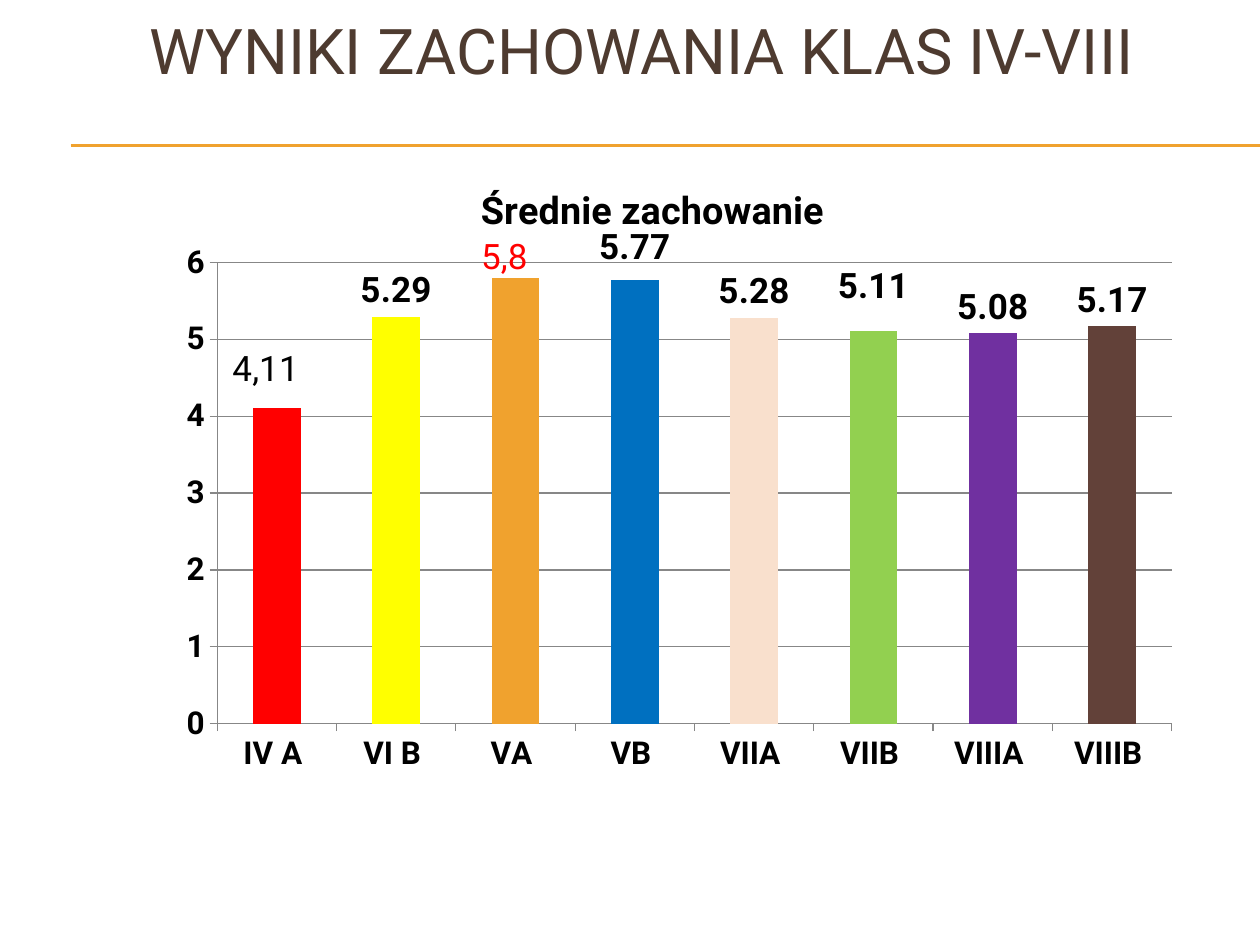
from lxml import etree
from pptx import Presentation
from pptx.chart.data import CategoryChartData
from pptx.dml.color import RGBColor
from pptx.enum.chart import XL_CHART_TYPE, XL_LABEL_POSITION, XL_TICK_MARK
from pptx.enum.shapes import MSO_CONNECTOR
from pptx.enum.text import MSO_ANCHOR, PP_ALIGN
from pptx.oxml import parse_xml
from pptx.oxml.ns import nsdecls, qn
from pptx.util import Pt

COLUMN = XL_CHART_TYPE.COLUMN_CLUSTERED
OUTSIDE_END = XL_LABEL_POSITION.OUTSIDE_END
TICK_OUT = XL_TICK_MARK.OUTSIDE
STRAIGHT = MSO_CONNECTOR.STRAIGHT
MIDDLE = MSO_ANCHOR.MIDDLE
CENTER = PP_ALIGN.CENTER

FONT = "Roboto"
COLORS = {
    "title": "4E3B30",
    "rule": "F0A22E",
    "text": "000000",
    "alert": "FF0000",
    "grid": "878787",
    "series": "F9E0CD",
}
CLASSES = [
    ("IV A ", 4.11, "FF0000"),
    ("VI B ", 5.29, "FFFF00"),
    ("VA ", 5.8, "F0A22E"),
    ("VB ", 5.77, "0070C0"),
    ("VIIA ", 5.28, "F9E0CD"),
    ("VIIB ", 5.11, "92D050"),
    ("VIIIA ", 5.08, "7030A0"),
    ("VIIIB ", 5.17, "624139"),
]
CUSTOM_LABELS = {0: ("4,11", "text"), 2: ("5,8", "alert")}
LABEL_SHIFTS = {0: (-0.01, -0.02), 2: (-0.01, 0.01), 3: (0, -0.01), 5: (0, -0.03)}
NO_LEADER_LINES = (
    f"<c:extLst {nsdecls('c')}>"
    '<c:ext uri="{CE6537A1-D6FC-4f65-9D91-7224C49458BB}" '
    'xmlns:c15="http://schemas.microsoft.com/office/drawing/2012/chart">'
    '<c15:showLeaderLines val="0"/></c:ext></c:extLst>'
)


def style_font(font, size, color, bold=False):
    font.name = FONT
    font.size = Pt(size)
    font.bold = bold
    font.color.rgb = RGBColor.from_string(COLORS[color])


def add_title(slide, text):
    box = slide.shapes.add_textbox(Pt(36), Pt(0), Pt(661.68), Pt(56.16))
    frame = box.text_frame
    frame.word_wrap = True
    frame.vertical_anchor = MIDDLE
    frame.text = text
    paragraph = frame.paragraphs[0]
    paragraph.alignment = CENTER
    style_font(paragraph.runs[0].font, 36, "title")


def add_rule(slide, top):
    rule = slide.shapes.add_connector(STRAIGHT, Pt(40.32), Pt(top), Pt(720), Pt(top))
    rule.line.color.rgb = RGBColor.from_string(COLORS["rule"])
    rule.line.width = Pt(0.75)
    etree.SubElement(rule.element.spPr, qn("a:effectLst"))


def set_layout(parent, position, **settings):
    for old_layout in parent.findall(qn("c:layout")):
        parent.remove(old_layout)
    layout = parse_xml(f"<c:layout {nsdecls('c')}><c:manualLayout/></c:layout>")
    for name, value in settings.items():
        etree.SubElement(layout[0], qn(f"c:{name}")).set("val", str(value))
    parent.insert(position, layout)


def style_line(line):
    line.color.rgb = RGBColor.from_string(COLORS["grid"])
    line.width = Pt(0.75)


def style_axes(chart):
    value_axis = chart.value_axis
    value_axis.minimum_scale = 0
    value_axis.maximum_scale = 6
    value_axis.major_unit = 1
    value_axis.has_major_gridlines = True
    style_line(value_axis.major_gridlines.format.line)
    value_axis.tick_labels.number_format = "#,##0"
    value_axis.tick_labels.number_format_is_linked = False
    for axis in (chart.category_axis, value_axis):
        axis.major_tick_mark = TICK_OUT
        style_line(axis.format.line)
        style_font(axis.tick_labels.font, 18, "text", True)


def hide_leader_lines(chart):
    for labels in chart.element.xpath(".//c:dLbls"):
        for setting in labels.findall(qn("c:showLeaderLines")):
            setting.set("val", "0")
        labels.append(parse_xml(NO_LEADER_LINES))


def style_labels(chart, series):
    labels = series.data_labels
    labels.show_value = True
    labels.position = OUTSIDE_END
    style_font(labels.font, 20, "text", True)
    for index in LABEL_SHIFTS:
        label = series.points[index].data_label
        if index in CUSTOM_LABELS:
            text, color = CUSTOM_LABELS[index]
            label.text_frame.text = text
            style_font(label.text_frame.paragraphs[0].runs[0].font, 20, color)
        else:
            style_font(label.font, 20, "text", True)
        label.position = OUTSIDE_END
    for element, (x, y) in zip(chart.element.xpath(".//c:dLbl"), LABEL_SHIFTS.values()):
        set_layout(element, 1, x=x, y=y)
    hide_leader_lines(chart)


def add_behaviour_chart(slide):
    names, values, fills = zip(*CLASSES)
    data = CategoryChartData()
    data.categories = names
    data.add_series("Series 1", values)
    chart = slide.shapes.add_chart(
        COLUMN, Pt(50.4), Pt(101.52), Pt(630), Pt(354.24), data
    ).chart
    style_font(chart.font, 18, "text")
    chart.has_legend = False
    chart.has_title = True
    title_frame = chart.chart_title.text_frame
    title_frame.text = "Średnie zachowanie"
    style_font(title_frame.paragraphs[0].runs[0].font, 21.6, "text", True)
    set_layout(chart.chart_title.element, 1, xMode="edge", yMode="edge", x=0.35, y=0)
    set_layout(
        chart.element.chart.plotArea, 0, layoutTarget="inner", xMode="edge", yMode="edge",
        x=0.117, y=0.137, w=0.866, h=0.744,
    )
    style_axes(chart)

    plot = chart.plots[0]
    plot.gap_width = 150
    plot.vary_by_categories = False
    series = plot.series[0]
    series.format.fill.solid()
    series.format.fill.fore_color.rgb = RGBColor.from_string(COLORS["series"])
    for index, color in enumerate(fills):
        if color != COLORS["series"]:
            fill = series.points[index].format.fill
            fill.solid()
            fill.fore_color.rgb = RGBColor.from_string(color)
    style_labels(chart, series)


def main():
    presentation = Presentation()
    presentation.slide_width = Pt(720)
    presentation.slide_height = Pt(540)
    slide = presentation.slides.add_slide(presentation.slide_layouts[6])
    for top in (82.8, 83.52):
        add_rule(slide, top)
    add_title(slide, "WYNIKI ZACHOWANIA KLAS IV-VIII")
    add_behaviour_chart(slide)
    presentation.save("out.pptx")


if __name__ == "__main__":
    main()
